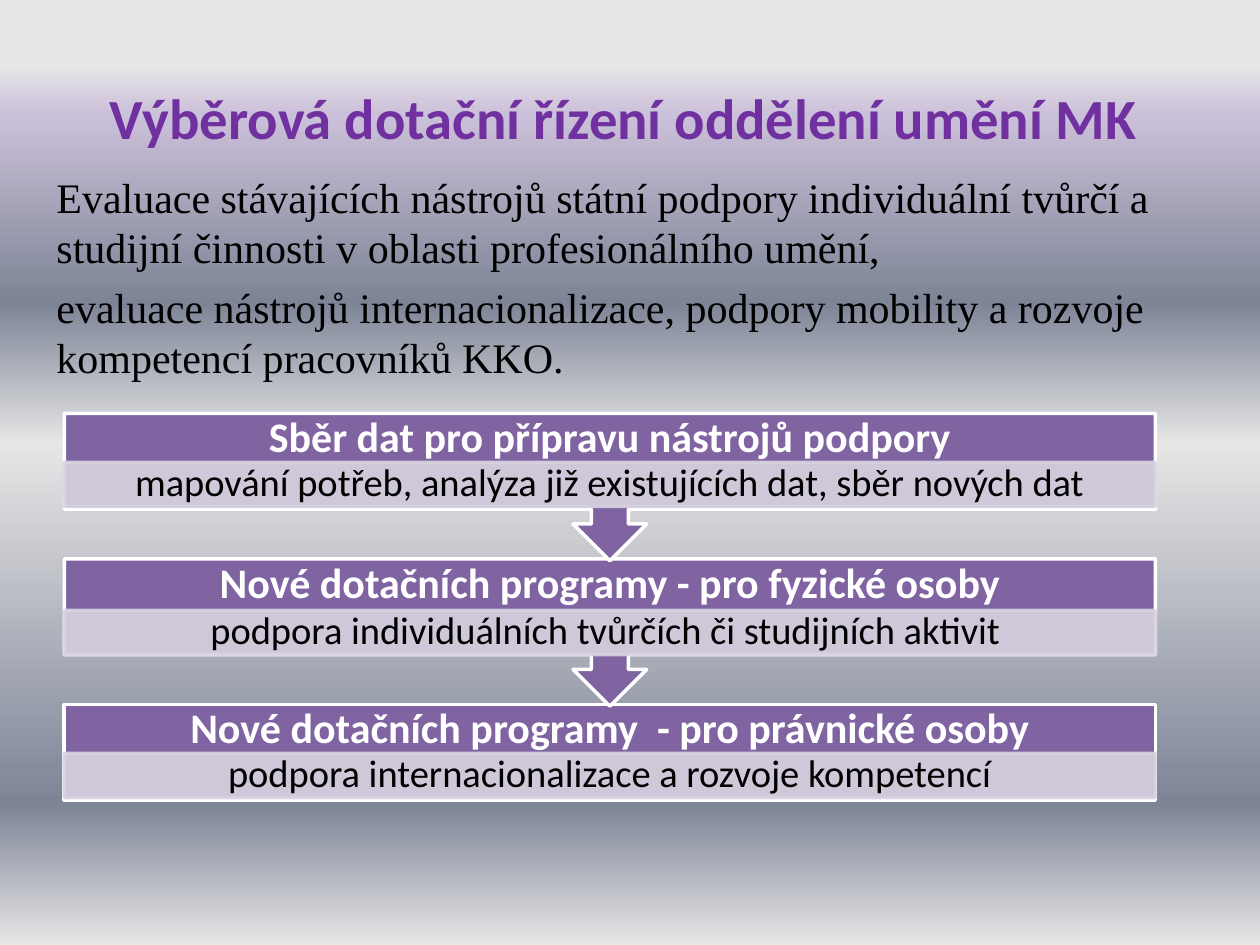
from dataclasses import dataclass

from lxml.etree import SubElement
from pptx import Presentation
from pptx.dml.color import RGBColor
from pptx.enum.shapes import MSO_SHAPE as Shape
from pptx.enum.text import MSO_ANCHOR as Anchor, PP_ALIGN as Align
from pptx.oxml.ns import qn
from pptx.util import Inches, Pt

COLORS = {
    "title": "7030A0", "text": "000000", "white": "FFFFFF",
    "step": "8064A2", "detail": "D8D3E0",
}
BACKGROUND = [(7, "E6E6E6"), (12, "CCC1DA"), (32, "7D8496"),
              (47, "E6E6E6"), (85, "7D8496"), (100, "E6E6E6")]

# Step grid: one column, three rows of equal pitch
LEFT, WIDTH = 0.51, 8.66
FIRST_TOP, PITCH = 3.28, 1.155
CALLOUT_HEIGHT, BOX_HEIGHT = 1.17, 0.76
HEADING_HEIGHT, DETAIL_HEIGHT = 0.41, 0.35


@dataclass
class Step:
    heading: str
    detail: str
    detail_offset: float = 0.39


@dataclass
class Style:
    font: str
    size: float
    color: str
    bold: bool = False
    align: Align = Align.CENTER
    anchor: Anchor = Anchor.MIDDLE
    line_spacing: float = 1.0
    space_before: float = 0
    margins: tuple[float, float] = (0.1, 0.05)


TITLE = Style("Calibri", 32.4, "title", bold=True)
BODY = Style("Times New Roman", 24, "text", align=Align.LEFT,
             anchor=Anchor.TOP, space_before=5.4)
HEADING = Style("Calibri", 24, "white", bold=True, line_spacing=0.9,
                margins=(0.19, 0.19))
DETAIL = Style("Calibri", 22, "text", line_spacing=0.9, margins=(0.17, 0.03))

STEPS = [
    Step("Sběr dat pro přípravu nástrojů podpory",
         "mapování potřeb, analýza již existujících dat, sběr nových dat"),
    Step("Nové dotačních programy - pro fyzické osoby",
         "podpora individuálních tvůrčích či studijních aktivit ", 0.41),
    Step("Nové dotačních programy  - pro právnické osoby",
         "podpora internacionalizace a rozvoje kompetencí"),
]


def rgb(name: str) -> RGBColor:
    return RGBColor.from_string(COLORS[name])


def paint_background(page) -> None:
    fill = page.background.fill
    fill.gradient()
    fill.gradient_angle = 270  # counter-clockwise: top to bottom
    stops = page.background._cSld.find(".//" + qn("a:gsLst"))
    for stop in list(stops):
        stops.remove(stop)
    for percent, color in BACKGROUND:
        stop = SubElement(stops, qn("a:gs"), pos=str(percent * 1000))
        SubElement(stop, qn("a:srgbClr"), val=color)


def write(box, lines: list[str], style: Style) -> None:
    frame = box.text_frame
    frame.word_wrap = True
    frame.vertical_anchor = style.anchor
    side, edge = map(Inches, style.margins)
    frame.margin_left = frame.margin_right = side
    frame.margin_top = frame.margin_bottom = edge
    for index, line in enumerate(lines):
        para = frame.add_paragraph() if index else frame.paragraphs[0]
        para.alignment = style.align
        para.line_spacing = style.line_spacing
        para.space_before = Pt(style.space_before)
        span = para.add_run()
        span.text = line
        span.font.name = style.font
        span.font.size = Pt(style.size)
        span.font.bold = style.bold
        span.font.color.rgb = rgb(style.color)


def add_text(page, area: tuple, lines: list[str], style: Style) -> None:
    write(page.shapes.add_textbox(*map(Inches, area)), lines, style)


def add_block(page, kind: Shape, area: tuple, fill: str, line: str):
    block = page.shapes.add_shape(kind, *map(Inches, area))
    block.shadow.inherit = False
    block.fill.solid()
    block.fill.fore_color.rgb = rgb(fill)
    block.line.color.rgb = rgb(line)
    block.line.width = Pt(2)
    return block


def add_step(page, row: int, step: Step) -> None:
    top = FIRST_TOP + row * PITCH
    # Every step but the last points down to the next one
    if row < len(STEPS) - 1:
        callout = add_block(page, Shape.UP_ARROW_CALLOUT,
                            (LEFT, top, WIDTH, CALLOUT_HEIGHT), "step", "white")
        callout.rotation = 180
    else:
        add_block(page, Shape.RECTANGLE,
                  (LEFT, top, WIDTH, BOX_HEIGHT), "step", "white")
    add_text(page, (LEFT, top, WIDTH, HEADING_HEIGHT), [step.heading], HEADING)

    area = (LEFT, top + step.detail_offset, WIDTH, DETAIL_HEIGHT)
    strip = add_block(page, Shape.RECTANGLE, area, "detail", "detail")
    for color in strip._element.spPr.iter(qn("a:srgbClr")):
        SubElement(color, qn("a:alpha"), val="90000")
    write(strip, [step.detail], DETAIL)


def main() -> None:
    deck = Presentation()
    deck.slide_width, deck.slide_height = Inches(10), Inches(7.5)
    page = deck.slides.add_slide(deck.slide_layouts[6])
    paint_background(page)

    # Title and introduction
    add_text(page, (0.5, 0.3, 9, 1.25),
             ["Výběrová dotační řízení oddělení umění MK "], TITLE)
    add_text(page, (0.35, 1.31, 9.07, 1.81), [
        "Evaluace stávajících nástrojů státní podpory individuální tvůrčí a "
        "studijní činnosti v oblasti profesionálního umění,",
        "evaluace nástrojů internacionalizace, podpory mobility a rozvoje "
        "kompetencí pracovníků KKO.",
    ], BODY)

    # Steps from the bottom up, so that each arrow overlaps the next step
    for row, step in reversed(list(enumerate(STEPS))):
        add_step(page, row, step)

    deck.save("out.pptx")


if __name__ == "__main__":
    main()
